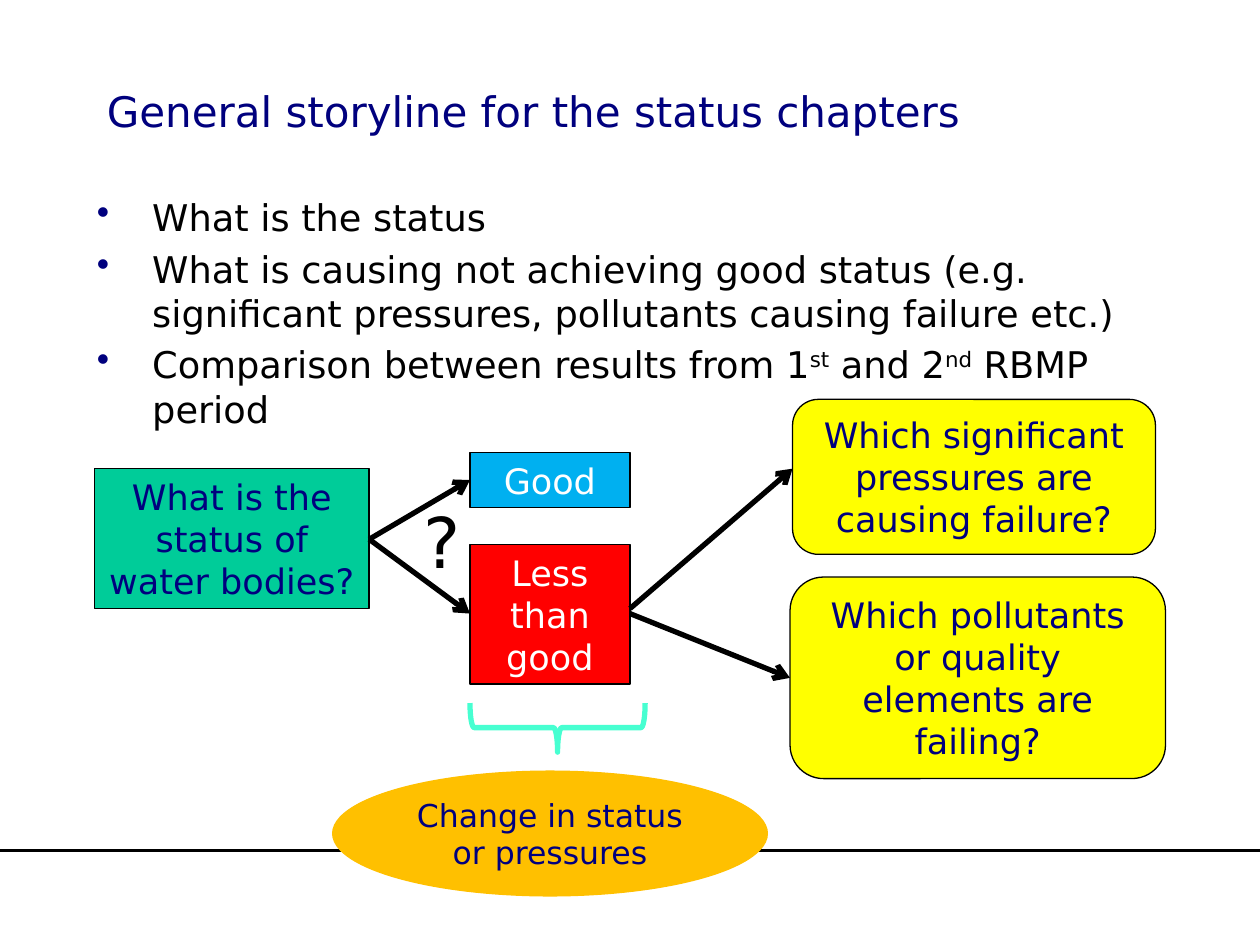
from lxml import etree
from pptx import Presentation
from pptx.dml.color import RGBColor
from pptx.enum import shapes, text
from pptx.oxml.ns import qn
from pptx.util import Inches, Pt

THEME = {
    "font": "DejaVu Sans",
    "navy": "00007E", "black": "000000", "white": "FFFFFF",
    "green": "00CC99", "blue": "00B0F0", "red": "FF0000",
    "yellow": "FFFF00", "amber": "FFC000", "mint": "47FFD1",
    "title": 24, "body": 21, "box": 20, "oval": 18, "mark": 40,
    "outline": 0.75, "rule": 2.25, "arrow": 3,
}

TITLE = "General storyline for the status chapters"
BULLETS = [
    [("What is the status", False)],
    [("What is causing not achieving good status (e.g. significant pressures, "
      "pollutants causing failure etc.)", False)],
    [("Comparison between results from 1", False), ("st", True),
     (" and 2", False), ("nd", True), (" RBMP period", False)],
]
KIND = shapes.MSO_SHAPE
BOXES = [
    ("What is the status of water bodies?", KIND.RECTANGLE,
     (0.75, 3.72, 2.18, 1.11), "green", "black", "navy", "box"),
    ("Good", KIND.RECTANGLE,
     (3.73, 3.59, 1.27, 0.44), "blue", "black", "white", "box"),
    ("Less than good", KIND.RECTANGLE,
     (3.73, 4.32, 1.27, 1.11), "red", "black", "white", "box"),
    ("Which significant pressures are causing failure?", KIND.ROUNDED_RECTANGLE,
     (6.29, 3.17, 2.88, 1.23), "yellow", "black", "navy", "box"),
    ("Which pollutants or quality elements are failing?", KIND.ROUNDED_RECTANGLE,
     (6.27, 4.58, 2.98, 1.6), "yellow", "black", "navy", "box"),
    ("Change in status or pressures", KIND.OVAL,
     (2.64, 6.12, 3.45, 0.99), "amber", "amber", "navy", "oval"),
]
ARROWS = [
    ((2.93, 4.28), (3.73, 3.81)),
    ((2.93, 4.28), (3.73, 4.87)),
    ((5, 4.83), (6.29, 3.72)),
    ((5, 4.87), (6.27, 5.38)),
]


def color(name):
    return RGBColor.from_string(THEME[name])


def style(p, size, name):
    for r in p.runs:
        r.font.name = THEME["font"]
        r.font.size = Pt(THEME[size])
        r.font.color.rgb = color(name)


def add_text(s, at, content, size, name, wrap=True):
    tf = s.shapes.add_textbox(*map(Inches, at)).text_frame
    tf.word_wrap = wrap
    tf.text = content
    style(tf.paragraphs[0], size, name)
    return tf


def add_bullets(s, at):
    tf = add_text(s, at, "", "body", "black")
    for i, parts in enumerate(BULLETS):
        p = tf.add_paragraph() if i else tf.paragraphs[0]
        pPr = p._p.get_or_add_pPr()
        pPr.set("marL", str(Inches(0.44)))
        pPr.set("indent", str(-Inches(0.44)))
        if i:
            p.space_before = Pt(THEME["body"] * 0.2)
        clr = etree.SubElement(pPr, qn("a:buClr"))
        etree.SubElement(clr, qn("a:srgbClr"), val=THEME["navy"])
        etree.SubElement(pPr, qn("a:buChar"), char="•")
        for content, raised in parts:
            r = p.add_run()
            r.text = content
            if raised:
                r._r.get_or_add_rPr().set("baseline", "30000")
        style(p, "body", "black")


def add_shape(s, kind, at, line, width):
    sp = s.shapes.add_shape(kind, *map(Inches, at))
    sp.shadow.inherit = False
    sp.line.color.rgb = color(line)
    sp.line.width = Pt(THEME[width])
    return sp


def add_box(s, content, kind, at, fill, line, ink, size):
    sp = add_shape(s, kind, at, line, "outline")
    sp.fill.solid()
    sp.fill.fore_color.rgb = color(fill)
    tf = sp.text_frame
    tf.word_wrap = True
    tf.vertical_anchor = text.MSO_ANCHOR.MIDDLE
    tf.text = content
    p = tf.paragraphs[0]
    p.alignment = text.PP_ALIGN.CENTER
    style(p, size, ink)


def add_line(s, start, end, width, head=False):
    c = s.shapes.add_connector(shapes.MSO_CONNECTOR.STRAIGHT,
                               *map(Inches, start + end))
    c.line.color.rgb = color("black")
    c.line.width = Pt(THEME[width])
    if head:
        etree.SubElement(c.line._get_or_add_ln(), qn("a:tailEnd"), type="arrow")
    etree.SubElement(c._element.spPr, qn("a:effectLst"))


def main():
    prs = Presentation()
    prs.slide_width, prs.slide_height = Inches(10), Inches(7.5)
    s = prs.slides.add_slide(prs.slide_layouts[6])
    add_line(s, (0, 6.75), (10, 6.75), "rule")
    title = add_text(s, (0.75, 0.25, 8.5, 1.25), TITLE, "title", "navy")
    title.vertical_anchor = text.MSO_ANCHOR.MIDDLE
    add_bullets(s, (0.67, 1.5, 8.5, 2.12))
    for box in BOXES:
        add_box(s, *box)
    for start, end in ARROWS:
        add_line(s, start, end, "arrow", head=True)
    add_text(s, (3.26, 3.91, 0.47, 0.77), "?", "mark", "black", wrap=False)
    brace = add_shape(s, KIND.RIGHT_BRACE, (4.23, 5.08, 0.39, 1.39), "mint", "arrow")
    brace.fill.background()
    brace.rotation = 90
    prs.save("out.pptx")


if __name__ == "__main__":
    main()
